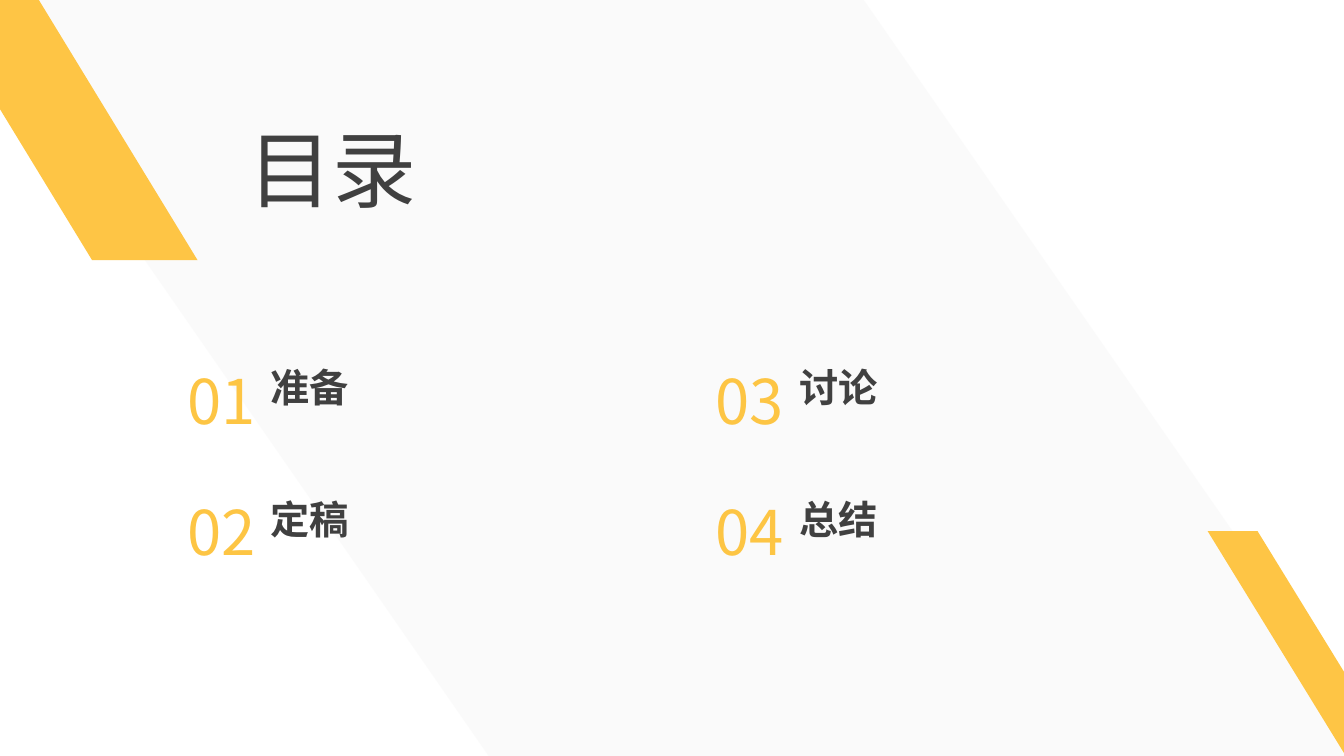
from lxml import etree
from pptx import Presentation, util as u
from pptx.dml.color import RGBColor
from pptx.enum import shapes, text
from pptx.oxml.ns import qn

COLORS = {"band": "F2F2F2", "accent": "FEC545", "number": "FDC544", "ink": "404040"}
TITLE_FORMAT = {"name": "Roboto", "size": u.Pt(60), "bold": False}
NUMBER_FORMAT = {"name": "Noto Sans CJK SC", "size": u.Pt(44), "bold": False}
LABEL_FORMAT = {"name": "Noto Sans CJK SC", "size": u.Pt(28), "bold": True}
ALIGN = text.PP_ALIGN


class SlideBuilder:
    """Holds the colours and the current slide; lengths are in points."""

    def __init__(self, slide, colors):
        self.slide = slide
        self.colors = colors

    def paint(self, shape, color):
        shape.shadow.inherit = False
        shape.fill.solid()
        shape.fill.fore_color.rgb = RGBColor.from_string(self.colors[color])
        shape.line.fill.background()

    def band(self, points, color, opacity):
        start, *rest = [(u.Pt(x), u.Pt(y)) for x, y in points]
        builder = self.slide.shapes.build_freeform(*start)
        builder.add_line_segments(rest, close=True)
        shape = builder.convert_to_shape()
        self.paint(shape, color)
        fill_color = shape._element.spPr.find(qn("a:solidFill"))[0]
        etree.SubElement(fill_color, qn("a:alpha"), val=str(opacity * 1000))

    def stripe(self, box, slant, color):
        shape = self.slide.shapes.add_shape(
            shapes.MSO_SHAPE.PARALLELOGRAM, *map(u.Pt, box))
        shape.adjustments[0] = slant
        shape._element.spPr.xfrm.set("flipV", "1")
        self.paint(shape, color)

    def fill_text(self, shape, words, font_format, color, align):
        frame = shape.text_frame
        frame.word_wrap = True
        frame.vertical_anchor = text.MSO_ANCHOR.TOP
        frame.auto_size = text.MSO_AUTO_SIZE.SHAPE_TO_FIT_TEXT
        paragraph = frame.paragraphs[0]
        for name, value in {"alignment": align, "line_spacing": 1.0,
                            "space_before": u.Pt(0)}.items():
            setattr(paragraph, name, value)
        run = paragraph.add_run()
        run.text = words
        for name, value in font_format.items():
            setattr(run.font, name, value)
        run.font.color.rgb = RGBColor.from_string(self.colors[color])
        # East Asian characters use their own typeface setting
        etree.SubElement(run.font._element, qn("a:ea"), typeface=font_format["name"])

    def title(self, box, words):
        shape = self.slide.shapes.title
        for name, value in zip(("left", "top", "width", "height"), box):
            setattr(shape, name, u.Pt(value))
        self.fill_text(shape, words, TITLE_FORMAT, "ink", ALIGN.JUSTIFY)

    def text_box(self, box, *content):
        self.fill_text(self.slide.shapes.add_textbox(*map(u.Pt, box)), *content)


def main():
    presentation = Presentation()
    presentation.slide_width, presentation.slide_height = u.Pt(960), u.Pt(540)
    slide = presentation.slides.add_slide(presentation.slide_layouts[5])
    page = SlideBuilder(slide, COLORS)

    # Background band and corner stripes
    page.band([(0, 0), (617, 0), (960, 494), (960, 540), (349, 540), (0, 36.7)],
              "band", 32)
    page.stripe((-105.1, -94.3, 246.2, 280.1), 0.694, "accent")
    page.stripe((862.6, 379.4, 195.8, 260.6), 0.818, "accent")

    # Title, moved in front of the background
    page.title((170.6, 80.6, 198.7, 79.9), "目录")
    slide.shapes._spTree.append(slide.shapes.title._element)

    # Agenda entries run down each column
    for index, label in enumerate(["准备", "定稿", "讨论", "总结"]):
        column, row = divmod(index, 2)
        left, top = 123.8 + 377.3 * column, 255.6 + 93.6 * row
        page.text_box((left, top, 69.1, 60.5), f"{index + 1:02}",
                      NUMBER_FORMAT, "number", ALIGN.CENTER)
        page.text_box((left + 62.6, top + 0.7, 190.1, 41), label,
                      LABEL_FORMAT, "ink", ALIGN.LEFT)

    presentation.save("out.pptx")


if __name__ == "__main__":
    main()
